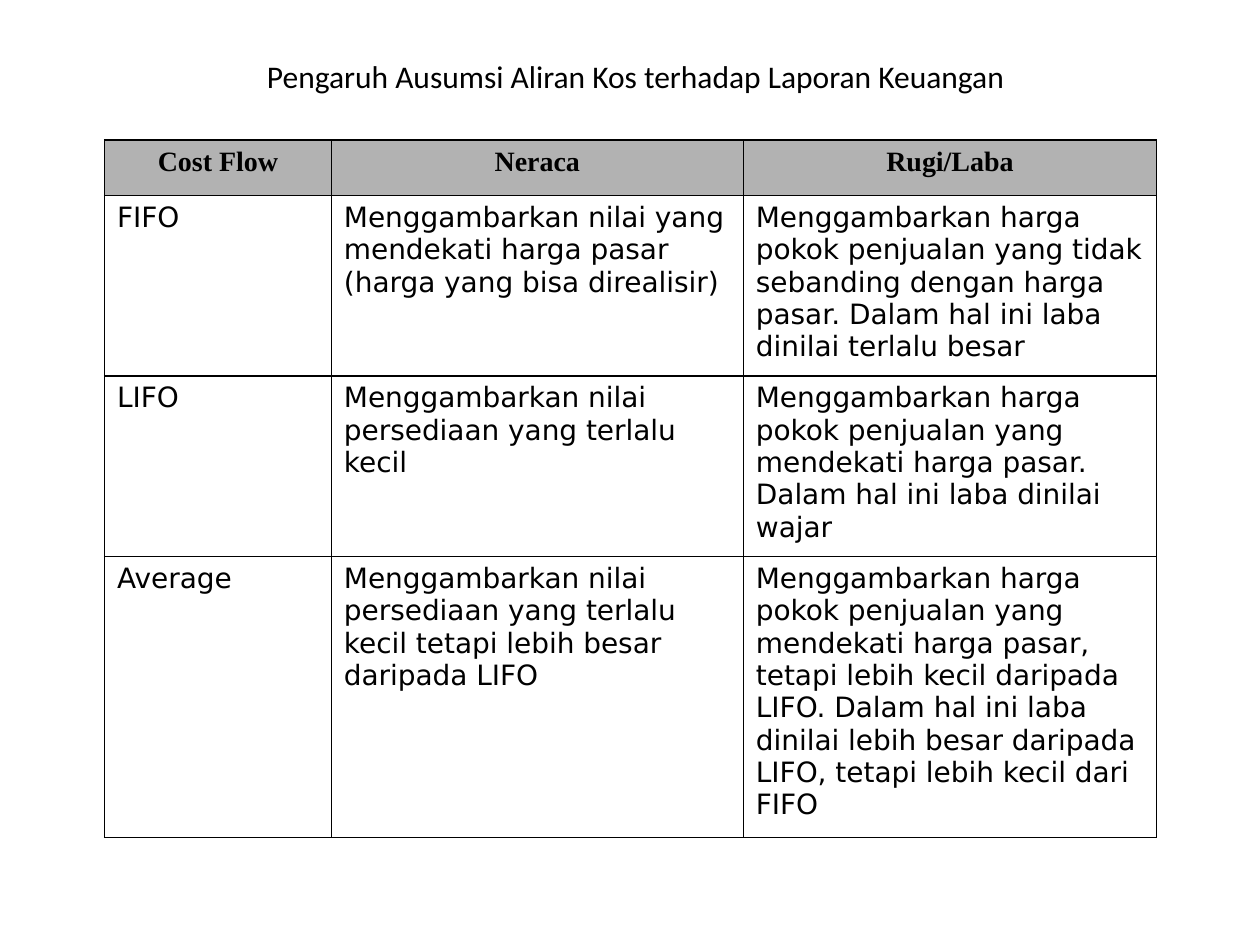
from lxml import etree
from pptx import Presentation
from pptx.dml.color import RGBColor
from pptx.enum import text
from pptx.oxml.ns import qn
from pptx.util import Inches, Pt

TITLE = "Pengaruh Ausumsi Aliran Kos terhadap Laporan Keuangan"
HEADERS = ("Cost Flow", "Neraca", "Rugi/Laba")
METHODS = [
    ("FIFO",
     "Menggambarkan nilai yang mendekati harga pasar (harga yang bisa direalisir)",
     "Menggambarkan harga pokok penjualan yang tidak sebanding dengan harga pasar. "
     "Dalam hal ini laba dinilai terlalu besar"),
    ("LIFO",
     "Menggambarkan nilai persediaan yang terlalu kecil",
     "Menggambarkan harga pokok penjualan yang mendekati harga pasar. "
     "Dalam hal ini laba dinilai wajar"),
    ("Average",
     "Menggambarkan nilai persediaan yang terlalu kecil tetapi lebih besar daripada LIFO",
     "Menggambarkan harga pokok penjualan yang mendekati harga pasar, tetapi lebih kecil "
     "daripada LIFO. Dalam hal ini laba dinilai lebih besar daripada LIFO, tetapi lebih "
     "kecil dari FIFO"),
]
COLUMN_WIDTHS = (1.8, 3.27, 3.28)
ROW_HEIGHTS = (0.44, 1.31, 1.31, 1.9)
COLORS = {"ink": "000000", "header": "B2B2B2"}


def write(text_frame, content, font, size, bold=False, centered=False):
    text_frame.text = content
    paragraph = text_frame.paragraphs[0]
    paragraph.alignment = text.PP_ALIGN.CENTER if centered else text.PP_ALIGN.LEFT
    run_font = paragraph.runs[0].font
    run_font.name = font
    run_font.size = Pt(size)
    run_font.bold = bold
    run_font.color.rgb = RGBColor.from_string(COLORS["ink"])


def add_borders(cell):
    properties = cell._tc.get_or_add_tcPr()
    for position, side in enumerate(("lnL", "lnR", "lnT", "lnB")):
        line = etree.Element(qn(f"a:{side}"), w=str(Pt(1)))
        fill = etree.SubElement(line, qn("a:solidFill"))
        etree.SubElement(fill, qn("a:srgbClr"), val=COLORS["ink"])
        properties.insert(position, line)


def add_title(slide):
    box = slide.shapes.add_textbox(Inches(0.92), Inches(0.29), Inches(8.25), Inches(0.62))
    box.text_frame.word_wrap = True
    box.text_frame.vertical_anchor = text.MSO_ANCHOR.MIDDLE
    write(box.text_frame, TITLE, "Calibri", 18, centered=True)


def add_comparison(slide):
    rows = [HEADERS, *METHODS]
    table = slide.shapes.add_table(
        len(rows), len(HEADERS), Inches(0.83), Inches(1.11),
        Inches(sum(COLUMN_WIDTHS)), Inches(sum(ROW_HEIGHTS))).table
    for column, width in zip(table.columns, COLUMN_WIDTHS):
        column.width = Inches(width)
    for row, height in zip(table.rows, ROW_HEIGHTS):
        row.height = Inches(height)

    for row_index, values in enumerate(rows):
        is_header = row_index == 0
        font = "Times New Roman" if is_header else "DejaVu Sans"
        for column_index, value in enumerate(values):
            cell = table.cell(row_index, column_index)
            write(cell.text_frame, value, font, 16, bold=is_header, centered=is_header)
            if is_header:
                cell.fill.solid()
                cell.fill.fore_color.rgb = RGBColor.from_string(COLORS["header"])
            else:
                cell.fill.background()
            add_borders(cell)


def main():
    presentation = Presentation()
    presentation.slide_width = Inches(10)
    presentation.slide_height = Inches(7.5)
    slide = presentation.slides.add_slide(presentation.slide_layouts[6])
    add_title(slide)
    add_comparison(slide)
    presentation.save("out.pptx")


if __name__ == "__main__":
    main()
